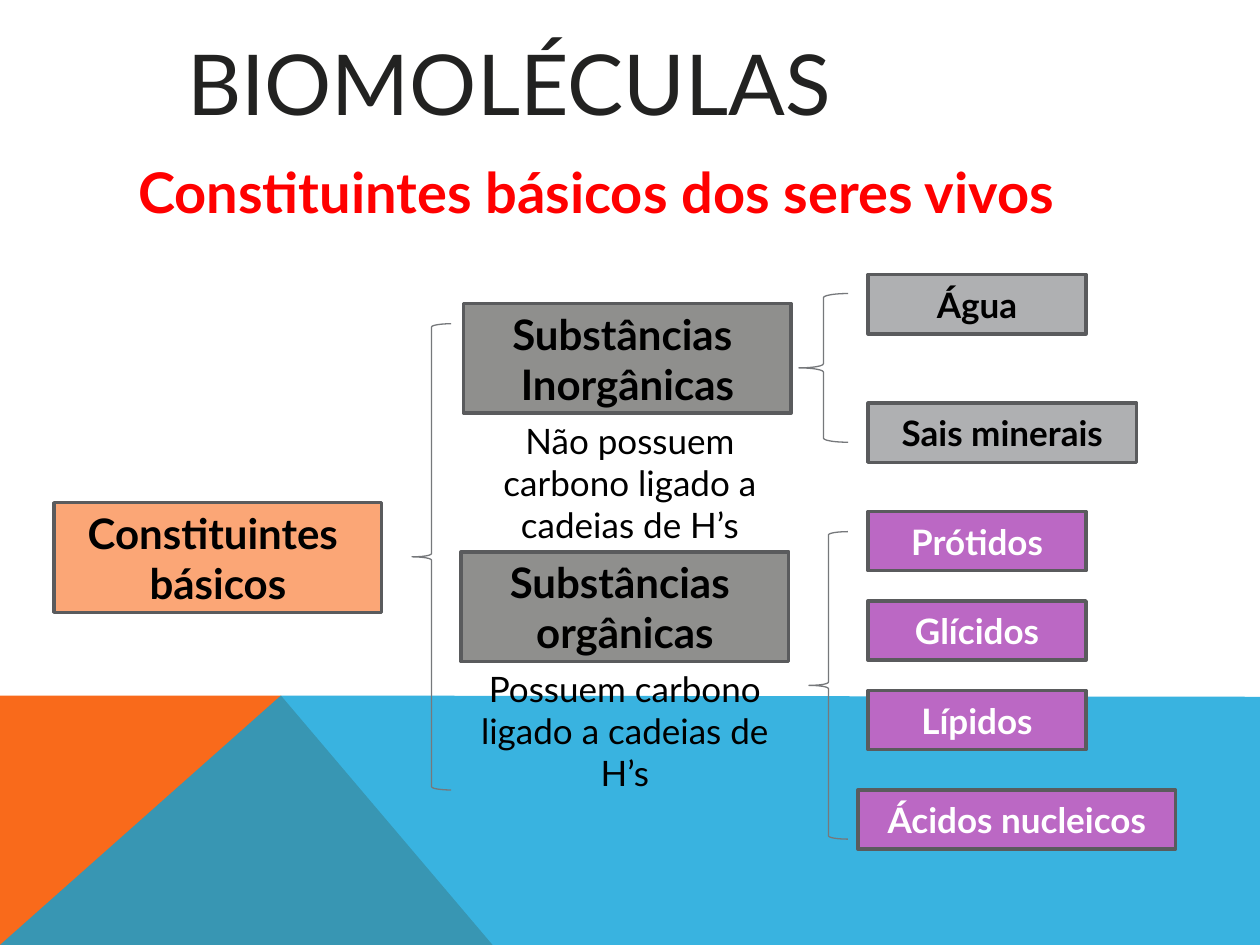
from lxml.etree import SubElement
from pptx import Presentation
from pptx.dml.color import RGBColor
from pptx.enum.shapes import MSO_SHAPE
from pptx.enum.text import MSO_ANCHOR, PP_ALIGN
from pptx.oxml.ns import qn
from pptx.util import Inches, Pt

FONT = "Lato"
BLACK = RGBColor(0x00, 0x00, 0x00)
WHITE = RGBColor(0xFF, 0xFF, 0xFF)
INK = RGBColor(0x22, 0x22, 0x21)
RED = RGBColor(0xFF, 0x00, 0x00)
ORANGE = RGBColor(0xF9, 0x6A, 0x1B)
BLUE = RGBColor(0x08, 0xA1, 0xD9)
PEACH = RGBColor(0xFB, 0xA6, 0x76)
DARK_GRAY = RGBColor(0x8F, 0x8F, 0x8D)
LIGHT_GRAY = RGBColor(0xAF, 0xB0, 0xB2)
PURPLE = RGBColor(0xBB, 0x68, 0xC4)
BORDER = RGBColor(0x5A, 0x5B, 0x5D)
BRACE_LINE = RGBColor(0x76, 0x78, 0x7B)

# Content: places are left, top, width, height in inches
BANDS = [  # points, colour, opacity in percent
    ([(0, 7.5), (0, 5.52), (2.23, 5.52), (3.91, 7.5)], ORANGE, 100),
    ([(0, 7.5), (2.23, 5.52), (10, 5.53), (10, 7.5)], BLUE, 80),
]
HEADINGS = [  # text, place, format
    ("BIOMOLÉCULAS", (1.03, 0.2, 6.02, 0.91), dict(size=48, color=INK)),
    ("Constituintes básicos dos seres vivos", (0.29, 1.2, 8.89, 0.64),
     dict(size=32, color=RED, bold=True)),
]
GROUP_W, GROUP_H = 2.6, 0.87
GROUPS = [  # lines, left, top, fill
    (["Constituintes ", "básicos"], 0.43, 3.99, PEACH),
    (["Substâncias ", "Inorgânicas"], 3.68, 2.41, DARK_GRAY),
    (["Substâncias ", "orgânicas"], 3.66, 4.38, DARK_GRAY),
]
DEFINITIONS = [
    ("Não possuem carbono ligado a cadeias de H’s", (3.66, 3.28, 2.68, 1.11)),
    ("Possuem carbono ligado a cadeias de H’s", (3.66, 5.25, 2.6, 1.11)),
]
BRACES = [(3.27, 2.57, 0.31, 3.7), (6.34, 2.33, 0.39, 1.18), (6.42, 4.22, 0.31, 2.44)]
EXAMPLE_H = 0.47
EXAMPLES = [  # fill, text colour, (text, left, top, width) of each
    (LIGHT_GRAY, BLACK, [("Água", 6.89, 2.18, 1.73),
                         ("Sais minerais", 6.89, 3.2, 2.13)]),
    (PURPLE, WHITE, [("Prótidos", 6.89, 4.06, 1.73),
                     ("Glícidos", 6.89, 4.77, 1.73),
                     ("Lípidos", 6.89, 5.48, 1.73),
                     ("Ácidos nucleicos", 6.81, 6.27, 2.52)]),
]


def write(holder, lines, *, size, color=BLACK, bold=False, anchor=MSO_ANCHOR.TOP):
    """Fill a shape with centred paragraphs, one for each line."""
    frame = holder.text_frame
    frame.word_wrap = True
    frame.vertical_anchor = anchor
    for number, line in enumerate(lines):
        paragraph = frame.add_paragraph() if number else frame.paragraphs[0]
        paragraph.alignment = PP_ALIGN.CENTER
        run = paragraph.add_run()
        run.text = line
        run.font.name = FONT
        run.font.size = Pt(size)
        run.font.bold = bold
        run.font.color.rgb = color


def add_label(slide, text, place, **style):
    label = slide.shapes.add_textbox(*map(Inches, place))
    write(label, [text], **style)


def add_box(slide, lines, place, fill, **style):
    box = slide.shapes.add_shape(MSO_SHAPE.RECTANGLE, *map(Inches, place))
    box.shadow.inherit = False
    box.fill.solid()
    box.fill.fore_color.rgb = fill
    box.line.color.rgb = BORDER
    box.line.width = Pt(2)
    write(box, lines, bold=True, anchor=MSO_ANCHOR.MIDDLE, **style)


def add_brace(slide, place):
    brace = slide.shapes.add_shape(MSO_SHAPE.LEFT_BRACE, *map(Inches, place))
    brace.shadow.inherit = False
    brace.fill.background()
    brace.line.color.rgb = BRACE_LINE
    brace.line.width = Pt(0.75)


def add_band(slide, points, color, opacity):
    start, *rest = [(Inches(x), Inches(y)) for x, y in points]
    builder = slide.shapes.build_freeform(*start)
    builder.add_line_segments(rest, close=True)
    band = builder.convert_to_shape()
    band.shadow.inherit = False
    band.fill.solid()
    band.fill.fore_color.rgb = color
    band.line.fill.background()
    if opacity < 100:
        solid = band.fill._xPr.find(qn("a:solidFill"))
        SubElement(solid[0], qn("a:alpha"), val=str(opacity * 1000))


def main():
    deck = Presentation()
    deck.slide_width, deck.slide_height = Inches(10), Inches(7.5)
    slide = deck.slides.add_slide(deck.slide_layouts[6])

    # Coloured bands at the foot
    for band in BANDS:
        add_band(slide, *band)

    # Title and subtitle
    for text, place, style in HEADINGS:
        add_label(slide, text, place, **style)

    # Classification tree
    for lines, left, top, fill in GROUPS:
        add_box(slide, lines, (left, top, GROUP_W, GROUP_H), fill, size=24)
    for text, place in DEFINITIONS:
        add_label(slide, text, place, size=20)
    for place in BRACES:
        add_brace(slide, place)
    for fill, color, items in EXAMPLES:
        for text, left, top, width in items:
            add_box(slide, [text], (left, top, width, EXAMPLE_H), fill,
                    size=20, color=color)

    deck.save("out.pptx")


if __name__ == "__main__":
    main()
